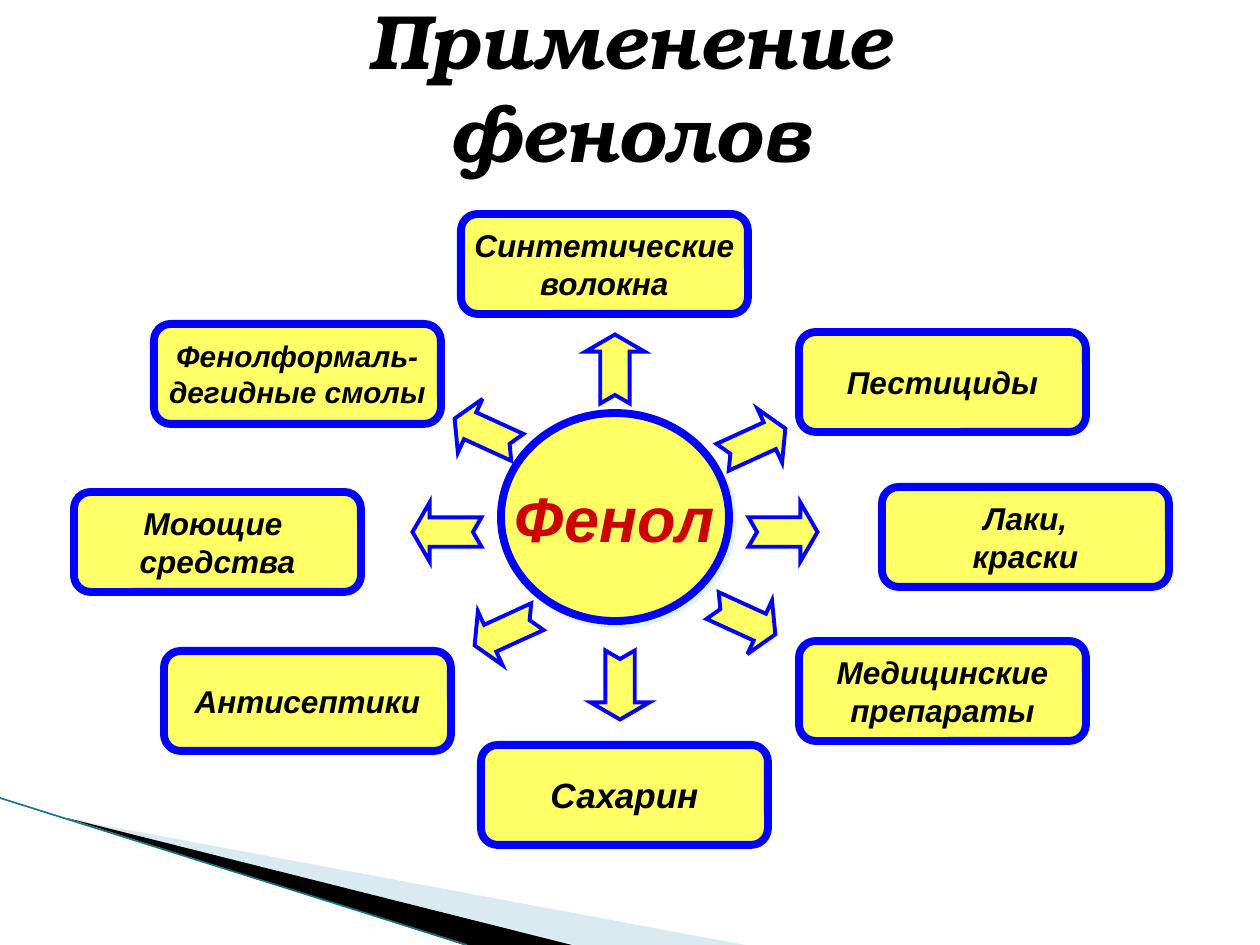
from lxml.etree import SubElement
from pptx import Presentation
from pptx.dml.color import RGBColor
from pptx.enum.shapes import MSO_CONNECTOR, MSO_SHAPE
from pptx.enum.text import MSO_ANCHOR, PP_ALIGN
from pptx.oxml.ns import qn
from pptx.util import Emu, Pt

SCALE = 914400 / 126
YELLOW, BLUE, BLACK = "FFFF66", "0000FF", "000000"
BOX_W, BOX_H = 287, 100
ARROW_W, ARROW_H = 69, 59

BOXES = [
    (461, 214, 18, ["Синтетические", "волокна"]),
    (799, 332, 18, ["Пестициды"]),
    (154, 324, 17, ["Фенолформаль-", "дегидные смолы"]),
    (74, 492, 18, ["Моющие ", "средства"]),
    (164, 651, 18, ["Антисептики"]),
    (882, 487, 18, ["Лаки,", "краски"]),
    (799, 641, 18, ["Медицинские", "препараты"]),
    (481, 745, 20, ["Сахарин"]),
]
ARROWS = [
    (783, 532, 0),
    (744, 620, 24.6),
    (620, 685, 90),
    (506, 631, 155.4),
    (447, 532, 180),
    (486, 433, 204.6),
    (615, 369, 270),
    (754, 443, 335.4),
]


def px(v):
    return Emu(round(v * SCALE))


def rgb(hex_code):
    return RGBColor.from_string(hex_code)


def add_text(sp, lines, size, color, font="Arial", wrap=False):
    tf = sp.text_frame
    tf.word_wrap = wrap
    tf.vertical_anchor = MSO_ANCHOR.MIDDLE
    for i, line in enumerate(lines):
        p = tf.paragraphs[0] if i == 0 else tf.add_paragraph()
        p.alignment = PP_ALIGN.CENTER
        r = p.add_run()
        r.text = line
        r.font.name = font
        r.font.size = Pt(size)
        r.font.bold = r.font.italic = True
        r.font.color.rgb = rgb(color)


def add_shape(s, kind, x, y, w, h, line_width):
    sp = s.shapes.add_shape(kind, px(x), px(y), px(w), px(h))
    sp.shadow.inherit = False
    sp.fill.solid()
    sp.fill.fore_color.rgb = rgb(YELLOW)
    sp.line.color.rgb = rgb(BLUE)
    sp.line.width = Pt(line_width)
    return sp


def add_box(s, x, y, size, lines):
    sp = add_shape(s, MSO_SHAPE.ROUNDED_RECTANGLE, x, y, BOX_W, BOX_H, 4.5)
    add_text(sp, lines, size, BLACK)


def add_arrow(s, cx, cy, angle):
    sp = add_shape(s, MSO_SHAPE.NOTCHED_RIGHT_ARROW, cx - ARROW_W / 2,
                   cy - ARROW_H / 2, ARROW_W, ARROW_H, 2.25)
    sp.adjustments[0], sp.adjustments[1] = 0.5, 0.29
    sp.rotation = angle
    ln = sp._element.spPr.find(qn("a:ln"))
    SubElement(ln, qn("a:miter"), lim="800000")


def add_center(s):
    sp = add_shape(s, MSO_SHAPE.OVAL, 501, 413, 228, 208, 4.5)
    effects = sp._element.spPr.find(qn("a:effectLst"))
    shadow = SubElement(effects, qn("a:outerShdw"), dist=str(Pt(2.8)),
                        dir=str(45 * 60000), algn="ctr", rotWithShape="0")
    SubElement(shadow, qn("a:srgbClr"), val="DEF5FA")
    add_text(sp, ["Фенол"], 36, "CC0000")


def add_wedge(s, points, color, opacity=100):
    fb = s.shapes.build_freeform(*points[0], scale=SCALE)
    fb.add_line_segments(points[1:], close=True)
    sp = fb.convert_to_shape()
    sp.shadow.inherit = False
    sp.fill.solid()
    sp.fill.fore_color.rgb = rgb(color)
    sp.line.fill.background()
    if opacity < 100:
        clr = sp._element.spPr.find(qn("a:solidFill"))[0]
        SubElement(clr, qn("a:alpha"), val=str(opacity * 1000))


def add_line(s, x1, y1, x2, y2, color, width):
    cn = s.shapes.add_connector(MSO_CONNECTOR.STRAIGHT, px(x1), px(y1), px(x2), px(y2))
    cn.line.color.rgb = rgb(color)
    cn.line.width = Pt(width)
    SubElement(cn._element.spPr, qn("a:effectLst"))


def add_title(s, text):
    sp = s.shapes.add_textbox(px(164), px(25), px(932), px(120))
    add_text(sp, [text], 44, BLACK, "TeX Gyre Bonum", wrap=True)


def main():
    prs = Presentation()
    prs.slide_width, prs.slide_height = px(1260), px(945)
    s = prs.slides.add_slide(prs.slide_layouts[6])
    add_wedge(s, [(69, 819), (745, 945), (575, 945)], "A0CBDC", 40)
    add_wedge(s, [(67, 818), (572, 945), (464, 945)], BLACK)
    add_line(s, 0, 798, 467, 945, "1B7587", 0.95)
    add_title(s, "Применение фенолов")
    add_center(s)
    for box in BOXES:
        add_box(s, *box)
    for arrow in ARROWS:
        add_arrow(s, *arrow)
    prs.save("out.pptx")


if __name__ == "__main__":
    main()
